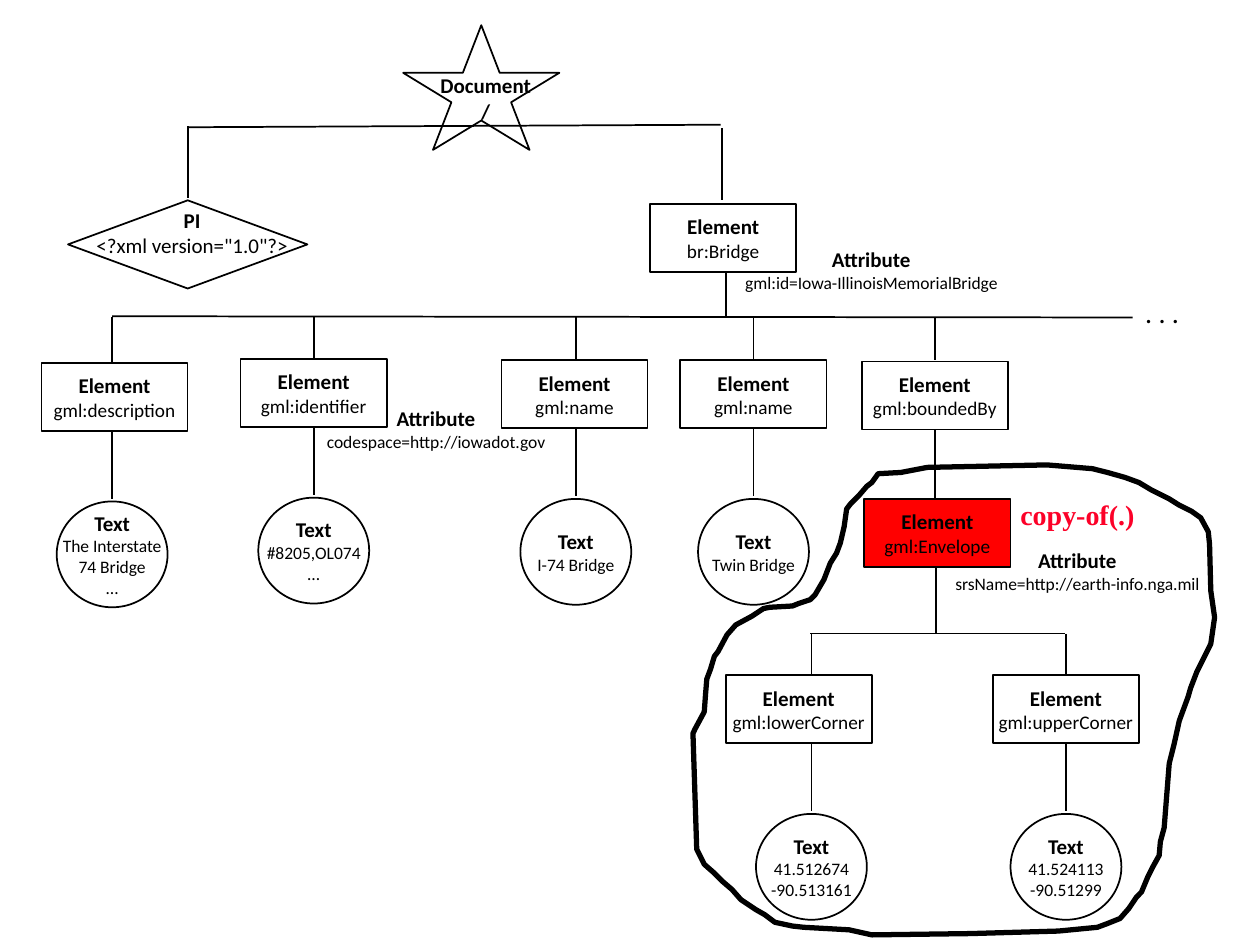
import pptx
import pptx.util
import pptx.dml.color
import pptx.enum.shapes
import pptx.enum.text
import pptx.oxml.ns
import lxml.etree

SHAPE = pptx.enum.shapes.MSO_SHAPE
ALIGN = pptx.enum.text.PP_ALIGN
BLACK, WHITE, RED, CRIMSON = "000000", "FFFFFF", "FF0000", "FC0128"

prs = pptx.Presentation()
prs.slide_width, prs.slide_height = pptx.util.Inches(10), pptx.util.Inches(7.5)
COL, ROW = prs.slide_width / 10, prs.slide_height / 7.5  # grid of 10 by 7.5

BOX_W, BOX_H = 1.16, 0.54
DISC_W, DISC_H = 0.88, 0.84
DISC_DROP = 1.1  # from the top of a box to the top of its disc
GAP = 0.02


def grid(x, y, w, h):
    return round(x * COL), round(y * ROW), round(w * COL), round(h * ROW)


def color(value):
    return pptx.dml.color.RGBColor.from_string(value)


def write(tf, lines, head=12, body=10, font="Calibri", ink=BLACK,
          bold=True, align=ALIGN.CENTER):
    """First line is the heading, the rest is plain."""
    for i, line in enumerate(lines):
        p = tf.paragraphs[0] if i == 0 else tf.add_paragraph()
        p.text = line
        p.alignment = align
        p.font.name = font
        p.font.size = pptx.util.Pt(body if i else head)
        p.font.bold = bold and i == 0
        p.font.color.rgb = color(ink)


def label(s, box, lines, wrap=True, **style):
    tf = s.shapes.add_textbox(*grid(*box)).text_frame
    tf.word_wrap = wrap
    tf.auto_size = pptx.enum.text.MSO_AUTO_SIZE.SHAPE_TO_FIT_TEXT
    write(tf, lines, **style)


def node(s, kind, box, lines=(), fill=WHITE, body=10):
    sp = s.shapes.add_shape(kind, *grid(*box))
    sp.shadow.inherit = False
    sp.fill.solid()
    sp.fill.fore_color.rgb = color(fill)
    sp.line.color.rgb = color(BLACK)
    sp.line.width = pptx.util.Pt(1)
    tf = sp.text_frame
    tf.word_wrap = False
    tf.vertical_anchor = pptx.enum.text.MSO_ANCHOR.MIDDLE
    write(tf, lines, body=body)


def link(s, x1, y1, x2, y2, width=1):
    cx = s.shapes.add_connector(pptx.enum.shapes.MSO_CONNECTOR.STRAIGHT,
                                *grid(x1, y1, x2, y2))
    cx.line.color.rgb = color(BLACK)
    cx.line.width = pptx.util.Pt(width)
    lxml.etree.SubElement(cx._element.spPr, pptx.oxml.ns.qn("a:effectLst"))


def element(s, x, y, name, fill=WHITE):
    node(s, SHAPE.RECTANGLE, (x, y, BOX_W, BOX_H), ["Element", name], fill, 11)


def branch(s, x, y, axis, rail, name, lines):
    """An element hanging from a rail, with its text disc or a bare stem below."""
    top = y + DISC_DROP
    link(s, axis, rail, axis, y - 0.01)
    element(s, x, y, name)
    link(s, axis, y + BOX_H, axis, top - GAP)
    if lines:
        node(s, SHAPE.OVAL, (axis - DISC_W / 2, top, DISC_W, DISC_H),
             ["Text"] + lines)


def attribute(s, x, y, w, text):
    label(s, (x, y, w, 0.47), ["Attribute", text])


def document(s, x, y):
    """Star at the top, with the processing instruction and the root element."""
    node(s, SHAPE.STAR_5_POINT, (x + 2.66, y, 1.24, 0.99))
    label(s, (x + 2.85, y + 0.33, 0.93, 0.5), ["Document", "/"], False, body=12)
    # the slash keeps the bold of the heading
    s.shapes[-1].text_frame.paragraphs[1].font.bold = True
    link(s, x + 0.95, y + 0.81, x + 5.18, y + 0.79)
    link(s, x + 0.95, y + 0.8, x + 0.95, y + 1.37)
    link(s, x + 5.19, y + 0.82, x + 5.19, y + 1.39)
    node(s, SHAPE.DIAMOND, (x, y + 1.39, 1.9, 0.7))
    label(s, (x + 0.1, y + 1.4, 1.77, 0.5),
          ["PI", '<?xml version="1.0"?>'], False, body=12)
    element(s, x + 4.62, y + 1.42, "br:Bridge")
    attribute(s, x + 5.1, y + 1.71, 2.55, "gml:id=Iowa-IllinoisMemorialBridge")


def children(s, left, right, rail):
    """Children of the root along one rail."""
    link(s, left, rail - 0.01, right, rail)
    link(s, 5.76, rail - 0.35, 5.76, rail)
    for x, y, axis, name, lines in [
            (0.33, 2.88, 0.89, "gml:description",
             ["The Interstate", "74 Bridge", "…"]),
            (1.91, 2.85, 2.49, "gml:identifier", ["#8205,OL074", "…"]),
            (3.98, 2.86, 4.57, "gml:name", ["I-74 Bridge"]),
            (5.40, 2.86, 5.98, "gml:name", ["Twin Bridge"]),
            (6.84, 2.87, 7.42, "gml:boundedBy", [])]:
        branch(s, x, y, axis, rail, name, lines)
    attribute(s, 2.3, 3.17, 2.32, "codespace=http://iowadot.gov")
    label(s, (right, rail - 0.22, 0.52, 0.37), [". . ."], False,
          head=16, bold=False, align=ALIGN.LEFT)
    s.shapes[-1].text_frame.paragraphs[0].space_after = pptx.util.Pt(6)


def envelope(s, x, y):
    """The copied element and its two corners."""
    rail = y + 1.07
    element(s, x, y, "gml:Envelope", RED)
    link(s, x + 0.57, y + BOX_H, x + 0.57, rail)
    link(s, x - 0.43, rail, x + 1.59, rail, 0.75)
    for left, axis, name, lines in [
            (x - 1.1, x - 0.42, "gml:lowerCorner", ["41.512674", "-90.513161"]),
            (x + 1.02, x + 1.6, "gml:upperCorner", ["41.524113", "-90.51299"])]:
        branch(s, left, y + 1.4, axis, rail, name, lines)
    attribute(s, x + 0.53, y + 0.34, 2.32, "srsName=http://earth-info.nga.mil")
    label(s, (x + 1.14, y - 0.06, 1.25, 0.37), ["copy-of(.)"], head=16,
          font="Times New Roman", ink=CRIMSON, align=ALIGN.LEFT)


def lasso(s, points):
    """Hand-drawn outline round the copied subtree."""
    spots = [(round(x * COL), round(y * ROW)) for x, y in points]
    fb = s.shapes.build_freeform(*spots[0])
    fb.add_line_segments(spots[1:], close=True)
    sp = fb.convert_to_shape()
    sp.shadow.inherit = False
    sp.fill.background()
    sp.line.color.rgb = color(BLACK)
    sp.line.width = pptx.util.Pt(3)


LASSO = [
    (7.15, 3.75), (6.97, 3.76), (6.92, 3.83), (6.88, 3.86), (6.82, 3.93),
    (6.75, 4), (6.72, 4.04), (6.7, 4.18), (6.67, 4.31), (6.64, 4.39),
    (6.59, 4.47), (6.54, 4.6), (6.47, 4.72), (6.43, 4.76), (6.34, 4.79),
    (6.29, 4.81), (6.11, 4.82), (6.06, 4.83), (5.97, 4.89), (5.84, 4.96),
    (5.77, 5.04), (5.7, 5.17), (5.67, 5.21), (5.64, 5.31), (5.61, 5.39),
    (5.6, 5.51), (5.59, 5.65), (5.52, 5.78), (5.5, 5.82), (5.53, 6.74),
    (5.59, 6.86), (5.67, 6.93), (5.74, 7), (5.81, 7.06), (5.88, 7.14),
    (6, 7.22), (6.07, 7.26), (6.15, 7.32), (6.29, 7.35), (6.38, 7.36),
    (6.74, 7.38), (6.92, 7.42), (7.7, 7.41), (8.4, 7.39), (8.71, 7.36),
    (8.79, 7.33), (8.89, 7.29), (8.96, 7.21), (9.02, 7.12), (9.06, 7.08),
    (9.11, 6.96), (9.15, 6.88), (9.2, 6.79), (9.21, 6.68), (9.24, 6.57),
    (9.25, 6.44), (9.28, 6.06), (9.32, 5.9), (9.36, 5.72), (9.43, 5.53),
    (9.45, 5.46), (9.5, 5.33), (9.57, 5.19), (9.61, 5.11), (9.64, 4.9),
    (9.61, 4.69), (9.6, 4.32), (9.59, 4.22), (9.53, 4.11), (9.46, 4.06),
    (9.36, 4.01), (9.28, 3.96), (9.14, 3.89), (9.04, 3.83), (8.93, 3.79),
    (8.79, 3.75), (8.67, 3.72), (8.31, 3.69), (7.36, 3.71)]

s = prs.slides.add_slide(prs.slide_layouts[6])
document(s, 0.54, 0.2)
children(s, 0.89, 8.99, 2.52)
envelope(s, 6.86, 3.96)
lasso(s, LASSO)
prs.save("out.pptx")
